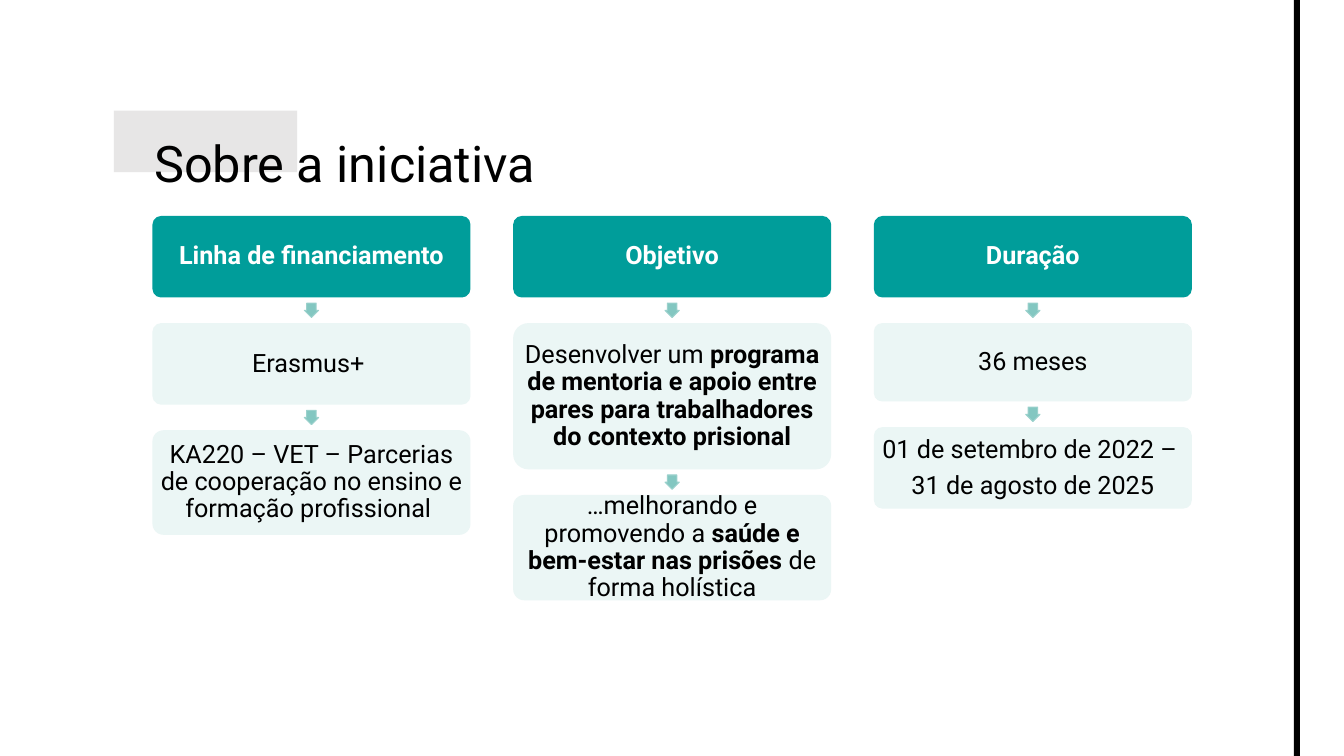
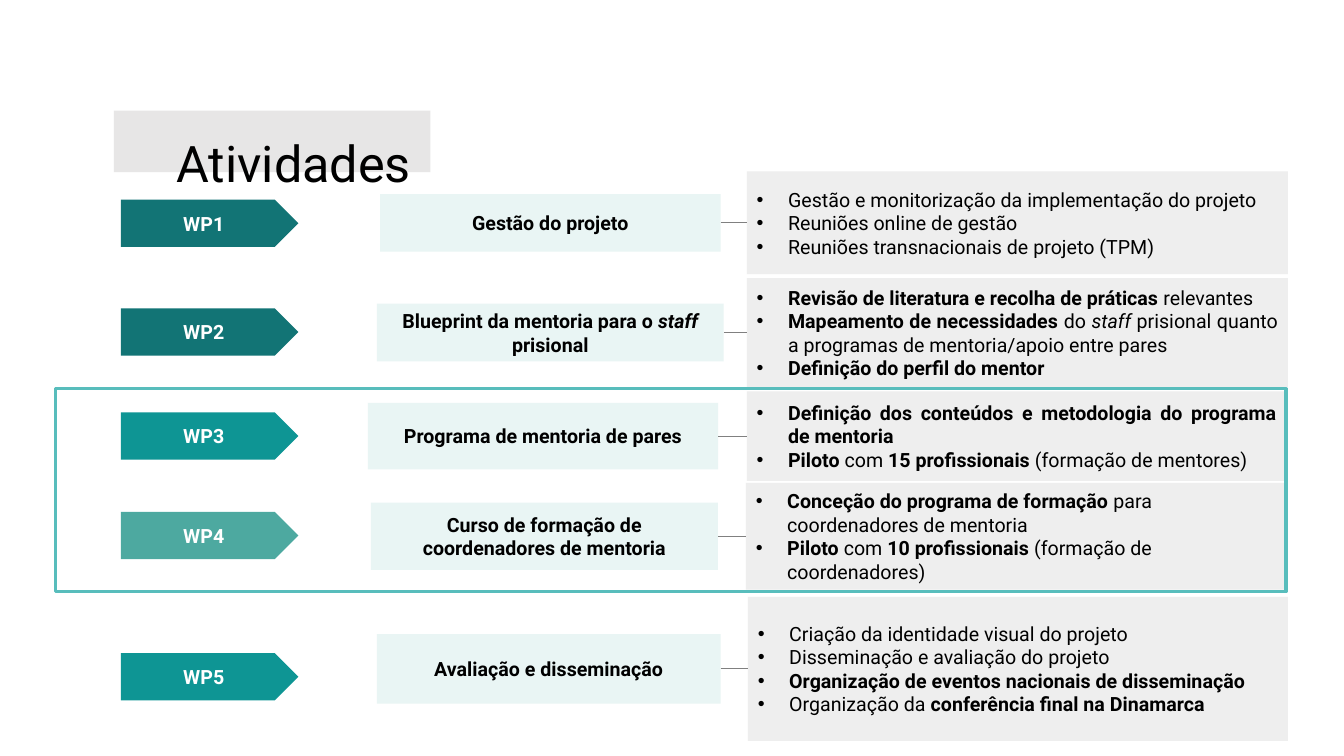
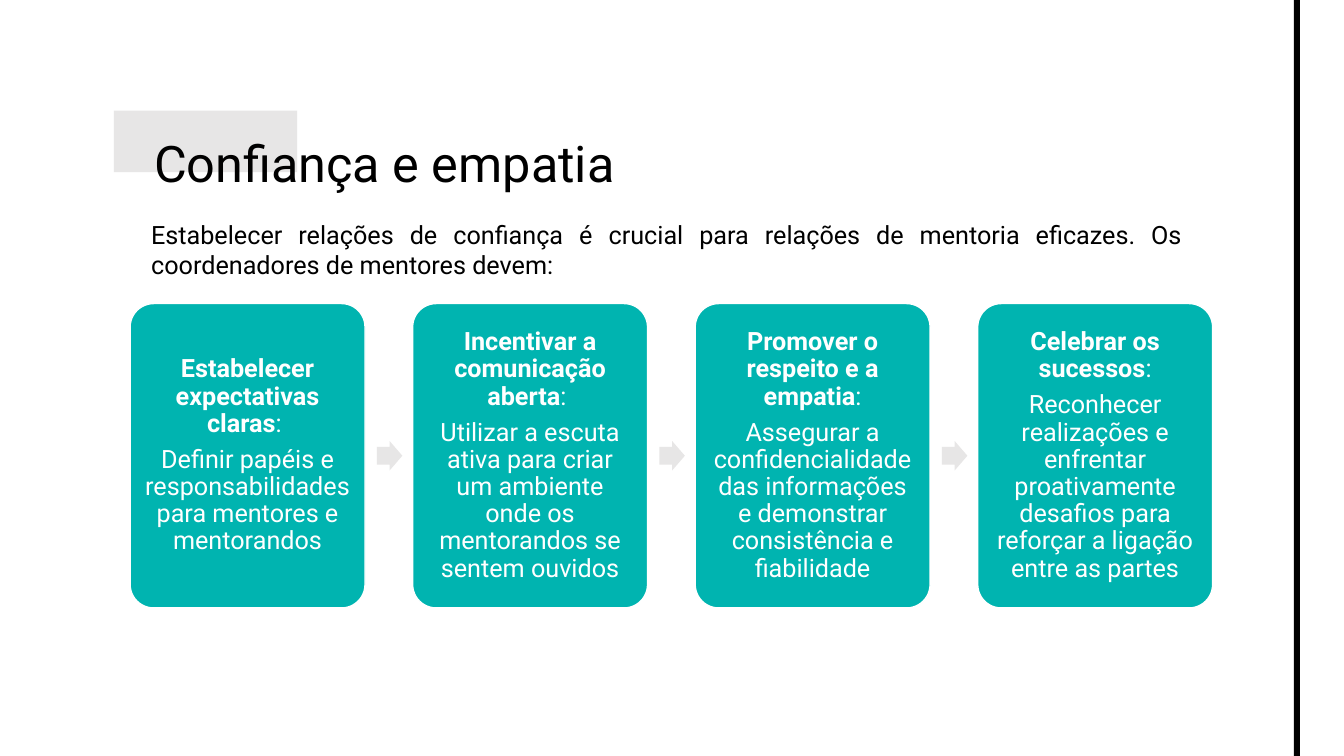
from lxml import etree
from pptx import Presentation
from pptx.dml.color import RGBColor
from pptx.enum.shapes import MSO_CONNECTOR, MSO_SHAPE
from pptx.enum.text import MSO_ANCHOR, MSO_AUTO_SIZE, PP_ALIGN
from pptx.oxml.ns import qn
from pptx.util import Cm, Pt

RECT, ROUNDED, PENTAGON = MSO_SHAPE.RECTANGLE, MSO_SHAPE.ROUNDED_RECTANGLE, MSO_SHAPE.PENTAGON
DOWN, RIGHT = MSO_SHAPE.DOWN_ARROW, MSO_SHAPE.RIGHT_ARROW
MIDDLE, BOTTOM = MSO_ANCHOR.MIDDLE, MSO_ANCHOR.BOTTOM
LEFT, CENTER, JUSTIFY = PP_ALIGN.LEFT, PP_ALIGN.CENTER, PP_ALIGN.JUSTIFY
STRAIGHT = MSO_CONNECTOR.STRAIGHT

COLORS = {
    "black": "000000", "white": "FFFFFF", "band": "E7E6E6", "panel": "EEEEEE",
    "head": "009D9A", "pale": "EBF6F5", "flow": "83C7C1", "flow_edge": "9BD1CC",
    "deep": "127475", "teal": "0E9594", "soft": "4DA9A0", "label": "E9F5F4",
    "link": "808080", "highlight": "58BDBC", "card": "00B4B0",
}


def margins(left, top, right, bottom):
    return {"margin_left": Cm(left), "margin_top": Cm(top),
            "margin_right": Cm(right), "margin_bottom": Cm(bottom)}


FRAME = {"word_wrap": True, "auto_size": MSO_AUTO_SIZE.NONE, "vertical_anchor": MIDDLE}
TIGHT = {"alignment": CENTER, "line_spacing": 0.9, "space_after": Pt(6.3)}
STYLES = {
    "title": {"size": 36, "frame": {**FRAME, "vertical_anchor": BOTTOM},
              "paragraph": {"alignment": LEFT, "line_spacing": 0.9}},
    "step": {"size": 18, "frame": {**FRAME, **margins(0.08, 0.08, 0.08, 0.08)},
             "paragraph": TIGHT},
    "card": {"size": 18, "frame": {**FRAME, **margins(0.18, 0.18, 0.18, 0.18)},
             "paragraph": TIGHT},
    "intro": {"size": 18, "frame": {**FRAME, **margins(0, 0.13, 0.25, 0.13)},
              "paragraph": {"alignment": JUSTIFY}},
    "label": {"size": 14, "frame": {**FRAME, **margins(0.25, 0.25, 0.25, 0.25)},
              "paragraph": {"alignment": CENTER}},
}
STYLES["list"] = {**STYLES["label"], "bullet": True, "paragraph": {"alignment": JUSTIFY}}
STYLES["ragged list"] = {**STYLES["list"], "paragraph": {"alignment": LEFT}}


def add_block(slide, kind, box, fill=None, line=None, line_width=1, adjust=()):
    block = slide.shapes.add_shape(kind, *[Cm(length) for length in box])
    block.shadow.inherit = False
    for index, value in enumerate(adjust):
        block.adjustments[index] = value
    if fill:
        block.fill.solid()
        block.fill.fore_color.rgb = RGBColor.from_string(COLORS[fill])
    else:
        block.fill.background()
    if line:
        block.line.color.rgb = RGBColor.from_string(COLORS[line])
        block.line.width = Pt(line_width)
    else:
        block.line.fill.background()
    return block


# In texts, *…* is bold and _…_ is italic.
def write(block, texts, style, color="black"):
    look = STYLES[style]
    frame = block.text_frame
    for name, value in look["frame"].items():
        setattr(frame, name, value)
    for number, text in enumerate(texts):
        paragraph = frame.add_paragraph() if number else frame.paragraphs[0]
        if look.get("bullet"):
            props = paragraph._p.get_or_add_pPr()
            props.set("marL", str(Cm(0.79)))
            props.set("indent", str(-Cm(0.79)))
            etree.SubElement(props, qn("a:buFont")).set("typeface", "Arial")
            etree.SubElement(props, qn("a:buChar")).set("char", "•")
        for name, value in look["paragraph"].items():
            setattr(paragraph, name, value)
        for bold_part, phrase in enumerate(text.split("*")):
            for italic_part, words in enumerate(phrase.split("_")):
                if words:
                    run = paragraph.add_run()
                    run.text = words
                    font = {"name": "Roboto", "size": Pt(look["size"]),
                            "bold": bold_part % 2 == 1, "italic": italic_part % 2 == 1}
                    for name, value in font.items():
                        setattr(run.font, name, value)
                    run.font.color.rgb = RGBColor.from_string(COLORS[color])


deck = Presentation()
deck.slide_width, deck.slide_height = Cm(33.87), Cm(19.05)

slides = []
for heading, title_left, title_width, band_width, has_bar in [
    ("Sobre a iniciativa", 3.63, 11.73, 4.62, True),
    ("Atividades", 4.19, 29, 7.98, False),
    ("Confiança e empatia", 3.63, 16.89, 4.62, True),
]:
    slide = deck.slides.add_slide(deck.slide_layouts[5])
    slides.append(slide)
    title = slide.shapes.title
    place = {"left": title_left, "top": 2.79, "width": title_width, "height": 2.21}
    for name, value in place.items():
        setattr(title, name, Cm(value))
    write(title, [heading], "title")
    band = add_block(slide, RECT, (2.87, 2.79, band_width, 1.55), "band")
    title._element.addprevious(band._element)
    if has_bar:
        add_block(slide, RECT, (32.61, 0, 0.15, 19.05), "black")
about, activities, trust = slides

step_left, step_width, step_pitch, step_gap, flow_size = 3.86, 7.98, 9.09, 0.68, 0.36
columns = [
    [(2.02, ["*Linha de financiamento*"]),
     (2.02, ["Erasmus+ "]),
     (2.6, ["KA220 – VET – Parcerias de cooperação no ensino e formação profissional "])],
    [(2.02, ["*Objetivo*"]),
     (3.65, ["Desenvolver um *programa de mentoria e apoio entre pares para "
             "trabalhadores do contexto prisional*"]),
     (2.62, ["…melhorando e promovendo a *saúde e bem-estar nas prisões *de forma holística"])],
    [(2.02, ["*Duração*"]),
     (1.94, ["36 meses"]),
     (2.02, ["01 de setembro de 2022 – ", "31 de agosto de 2025"])],
]
for column, steps in enumerate(columns):
    left, top = step_left + column * step_pitch, 5.46
    for row, (height, texts) in enumerate(steps):
        if row:
            flow_left = left + (step_width - flow_size) / 2
            flow_top = top - (step_gap + flow_size) / 2
            add_block(about, DOWN, (flow_left, flow_top, flow_size, flow_size),
                      "flow", "flow_edge", 0.75, (0.67, 0.5))
        tone = "pale" if row else "head"
        step = add_block(about, ROUNDED, (left, top, step_width, height), tone, tone, 1, (0.1,))
        write(step, texts, "step", "black" if row else "white")
        top += height + step_gap

packages = [
    ("WP1", "deep", 5.03, (9.58, 8.58, 1.45), "*Gestão do projeto*",
     (18.82, 4.32, 13.64, 2.59), "list",
     ["Gestão e monitorização da implementação do projeto",
      "Reuniões online de gestão",
      "Reuniões transnacionais de projeto (TPM)"]),
    ("WP2", "deep", 7.77, (9.5, 8.74, 1.45), "*Blueprint da mentoria para o _staff_ prisional*",
     (18.82, 7.01, 13.64, 2.74), "list",
     ["*Revisão de literatura e recolha de práticas *relevantes ",
      "*Mapeamento de necessidades *do _staff_ prisional quanto a programas de "
      "mentoria/apoio entre pares",
      "*Definição do perfil do mentor*"]),
    ("WP3", "teal", 10.39, (9.27, 8.83, 1.68), "*Programa de mentoria de pares*",
     (18.82, 9.86, 13.61, 2.26), "list",
     ["*Definição dos conteúdos e metodologia do programa de mentoria*",
      "*Piloto *com *15 profissionais *(formação de mentores)"]),
    ("WP4", "soft", 12.9, (9.35, 8.74, 1.7), "*Curso de formação de coordenadores de mentoria*",
     (18.8, 12.17, 13.64, 2.69), "ragged list",
     ["*Conceção do programa de formação *para coordenadores de mentoria",
      "*Piloto *com *10 profissionais* (formação de coordenadores)"]),
    ("WP5", "teal", 16.46, (9.5, 8.66, 1.75), "*Avaliação e disseminação*",
     (18.85, 15.04, 13.61, 3.63), "list",
     ["Criação da identidade visual do projeto",
      "Disseminação e avaliação do projeto",
      "*Organização de eventos nacionais de disseminação*",
      "Organização da *conferência final na Dinamarca*"]),
]
for code, tone, code_top, label_box, name, detail_box, list_style, details in packages:
    label_left, label_width, label_height = label_box
    detail_left, detail_top, detail_width, detail_height = detail_box
    middle = detail_top + detail_height / 2
    tag = add_block(activities, PENTAGON, (3.05, code_top, 4.47, 1.19), tone, adjust=(0.5,))
    write(tag, [f"*{code}*"], "label", "white")
    label = add_block(activities, RECT,
                      (label_left, middle - label_height / 2, label_width, label_height), "label")
    write(label, [name], "label")
    write(add_block(activities, RECT, detail_box, "panel"), details, list_style)
    link = activities.shapes.add_connector(
        STRAIGHT, Cm(label_left + label_width), Cm(middle), Cm(detail_left), Cm(middle))
    link.line.color.rgb = RGBColor.from_string(COLORS["link"])
    link.line.width = Pt(0.75)
    etree.SubElement(link._element.spPr, qn("a:effectLst"))
add_block(activities, RECT, (1.4, 9.8, 31.01, 5.11), line="highlight", line_width=2.25)

intro = trust.shapes.add_textbox(Cm(3.81), Cm(5.38), Cm(26.24), Cm(1.8))
write(intro, ["Estabelecer relações de confiança é crucial para relações de mentoria eficazes. "
              "Os coordenadores de mentores devem:"], "intro")

card_left, card_top, card_width, card_height, card_pitch = 3.28, 7.65, 5.92, 7.67, 7.12
duties = [
    ["*Estabelecer expectativas claras*: ",
     "Definir papéis e responsabilidades para mentores e mentorandos"],
    ["*Incentivar a comunicação aberta*: ",
     "Utilizar a escuta ativa para criar um ambiente onde os mentorandos se sentem ouvidos"],
    ["*Promover o respeito e a empatia*:",
     "Assegurar a confidencialidade das informações e demonstrar consistência e fiabilidade"],
    ["*Celebrar os sucessos*:",
     "Reconhecer realizações e enfrentar proativamente desafios para reforçar a ligação "
     "entre as partes"],
]
for position, texts in enumerate(duties):
    left = card_left + position * card_pitch
    if position:
        add_block(trust, RIGHT, (left - 0.9, card_top + (card_height - 0.74) / 2, 0.64, 0.74),
                  "band", adjust=(0.6, 0.5))
    card = add_block(trust, ROUNDED, (left, card_top, card_width, card_height),
                     "card", "white", 1, (0.1,))
    write(card, texts, "card", "white")

deck.save("out.pptx")
